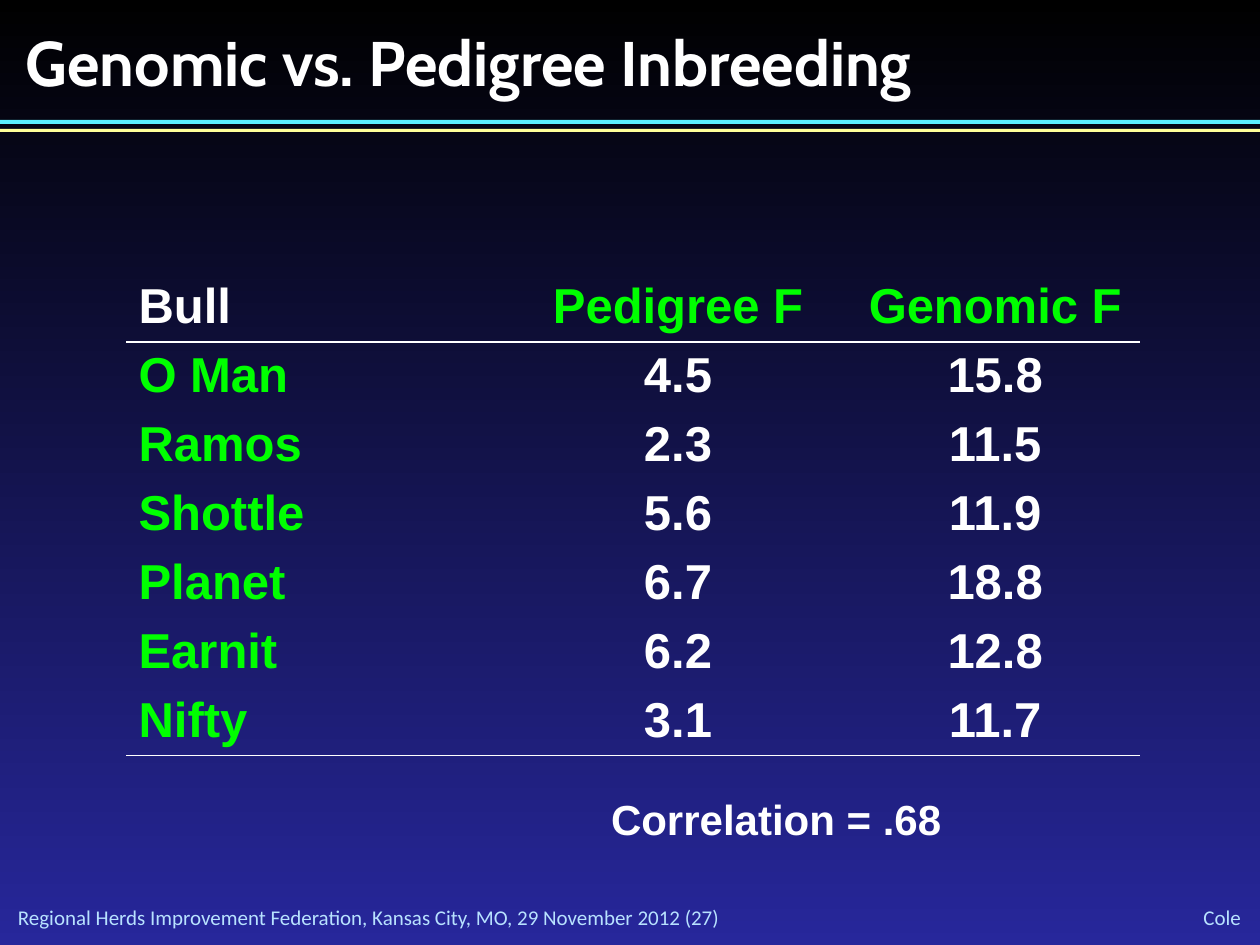
from lxml.etree import SubElement
from pptx import Presentation
from pptx.dml.color import RGBColor
from pptx.enum.shapes import MSO_SHAPE as Preset
from pptx.enum.text import MSO_ANCHOR as Anchor, MSO_AUTO_SIZE as AutoSize, PP_ALIGN as Align
from pptx.oxml.ns import qn
from pptx.util import Pt

PX = 914400 / 126
WIDTH, HEIGHT = 1260, 945

BLACK = RGBColor(0x00, 0x00, 0x00)
NAVY = RGBColor(0x27, 0x27, 0x9B)
WHITE = RGBColor(0xFF, 0xFF, 0xFF)
GREEN = RGBColor(0x00, 0xFF, 0x00)
CYAN = RGBColor(0x5B, 0xEF, 0xFF)
YELLOW = RGBColor(0xFF, 0xFF, 0x99)
PALE_BLUE = RGBColor(0xB8, 0xE2, 0xFF)

COLUMNS = (410, 284, 29, 290)
ROW_HEIGHT = 69
ROWS = (
    ("Bull", "Pedigree F", "", "Genomic F"),
    ("O Man", "4.5", "", "15.8"),
    ("Ramos", "2.3", "", "11.5"),
    ("Shottle", "5.6", "", "11.9"),
    ("Planet", "6.7", "", "18.8"),
    ("Earnit", "6.2", "", "12.8"),
    ("Nifty", "3.1", "", "11.7"),
)


def emu(*lengths):
    """Turn px lengths into a list of EMU."""
    return [round(length * PX) for length in lengths]


def write(frame, text, size=28, font="Arial", color=WHITE, bold=True, align=Align.LEFT):
    """Put one formatted line of text in a text frame."""
    paragraph = frame.paragraphs[0]
    paragraph.alignment = align
    run = paragraph.add_run()
    run.text = text
    run.font.size = Pt(size)
    run.font.name = font
    run.font.bold = bold
    run.font.color.rgb = color


def set_frame(frame, anchor=Anchor.TOP, margin=0, wrap=True):
    """Set the anchor, margins and wrapping of a text frame."""
    frame.auto_size = AutoSize.NONE
    frame.word_wrap = wrap
    frame.vertical_anchor = anchor
    frame.margin_left, frame.margin_top, frame.margin_right, frame.margin_bottom = emu(*[margin] * 4)


def set_borders(cell, ruled_sides):
    """Draw a white rule on the named sides of a cell and none elsewhere."""
    properties = cell._tc.get_or_add_tcPr()
    for side in "LRTB":
        line = SubElement(properties, qn(f"a:ln{side}"), w=str(Pt(1)))
        if side in ruled_sides:
            fill = SubElement(line, qn("a:solidFill"))
            SubElement(fill, qn("a:srgbClr"), val=str(WHITE))
        else:
            SubElement(line, qn("a:noFill"))


def add_background(slide):
    """Fill the slide with a gradient from black down to navy."""
    fill = slide.background.fill
    fill.gradient()
    fill.gradient_angle = 270
    for stop, color in zip(fill.gradient_stops, (BLACK, NAVY)):
        stop.color.rgb = color


def add_header(slide, left, top, width):
    """Place the title and the two bars below it."""
    title = slide.shapes.title
    title.left, title.top, title.width, title.height = emu(left + 26, top + 23, width - 57, 76)
    set_frame(title.text_frame)
    write(title.text_frame, "Genomic vs. Pedigree Inbreeding", size=36, font="Cabin")
    for offset, height, color in ((120, 4, CYAN), (129, 3, YELLOW)):
        bar = slide.shapes.add_shape(Preset.RECTANGLE, *emu(left, top + offset, width, height))
        bar.shadow.inherit = False
        bar.fill.solid()
        bar.fill.fore_color.rgb = color
        bar.line.fill.background()


def add_inbreeding_table(slide, left, top):
    """Place the table of pedigree and genomic inbreeding per bull."""
    box = emu(left, top, sum(COLUMNS), ROW_HEIGHT * len(ROWS))
    table = slide.shapes.add_table(len(ROWS), len(COLUMNS), *box).table
    table.first_row = table.horz_banding = False
    for column, width in zip(table.columns, emu(*COLUMNS)):
        column.width = width
    for row_index, values in enumerate(ROWS):
        table.rows[row_index].height = emu(ROW_HEIGHT)[0]
        ruled_sides = {0: "B", 1: "T", len(ROWS) - 1: "B"}.get(row_index, "")
        for column_index, value in enumerate(values):
            cell = table.cell(row_index, column_index)
            set_borders(cell, ruled_sides)
            cell.fill.background()
            if value:
                is_label = (row_index == 0) != (column_index == 0)
                write(cell.text_frame, value, color=GREEN if is_label else WHITE,
                      align=Align.CENTER if column_index else Align.LEFT)


def add_correlation(slide, left, top, width, height):
    """Place the correlation below the table."""
    frame = slide.shapes.add_textbox(*emu(left, top, width, height)).text_frame
    set_frame(frame, margin=6, wrap=False)
    frame.margin_left, frame.margin_right = emu(13, 13)
    write(frame, "Correlation = .68", size=24)


def add_footer(slide, left, top, width, height):
    """Place the event at the left and the speaker at the right."""
    speaker_width = 142
    event_width = width - speaker_width
    parts = (
        ("Regional Herds Improvement Federation, Kansas City, MO, 29 November 2012 (27)",
         left, event_width, Align.LEFT),
        ("Cole", left + event_width, speaker_width, Align.RIGHT),
    )
    for text, part_left, part_width, align in parts:
        frame = slide.shapes.add_textbox(*emu(part_left, top, part_width, height)).text_frame
        set_frame(frame, anchor=Anchor.MIDDLE)
        write(frame, text, size=12, font="Calibri", color=PALE_BLUE, bold=False, align=align)


def main():
    """Build the slide and save it."""
    presentation = Presentation()
    presentation.slide_width, presentation.slide_height = emu(WIDTH, HEIGHT)
    slide = presentation.slides.add_slide(presentation.slide_layouts.get_by_name("Title Only"))
    add_background(slide)
    add_footer(slide, 18, 904, 1223, 26)
    add_header(slide, 0, 0, WIDTH)
    add_inbreeding_table(slide, 126, 273)
    add_correlation(slide, 598, 788, 356, 64)
    presentation.save("out.pptx")


if __name__ == "__main__":
    main()
